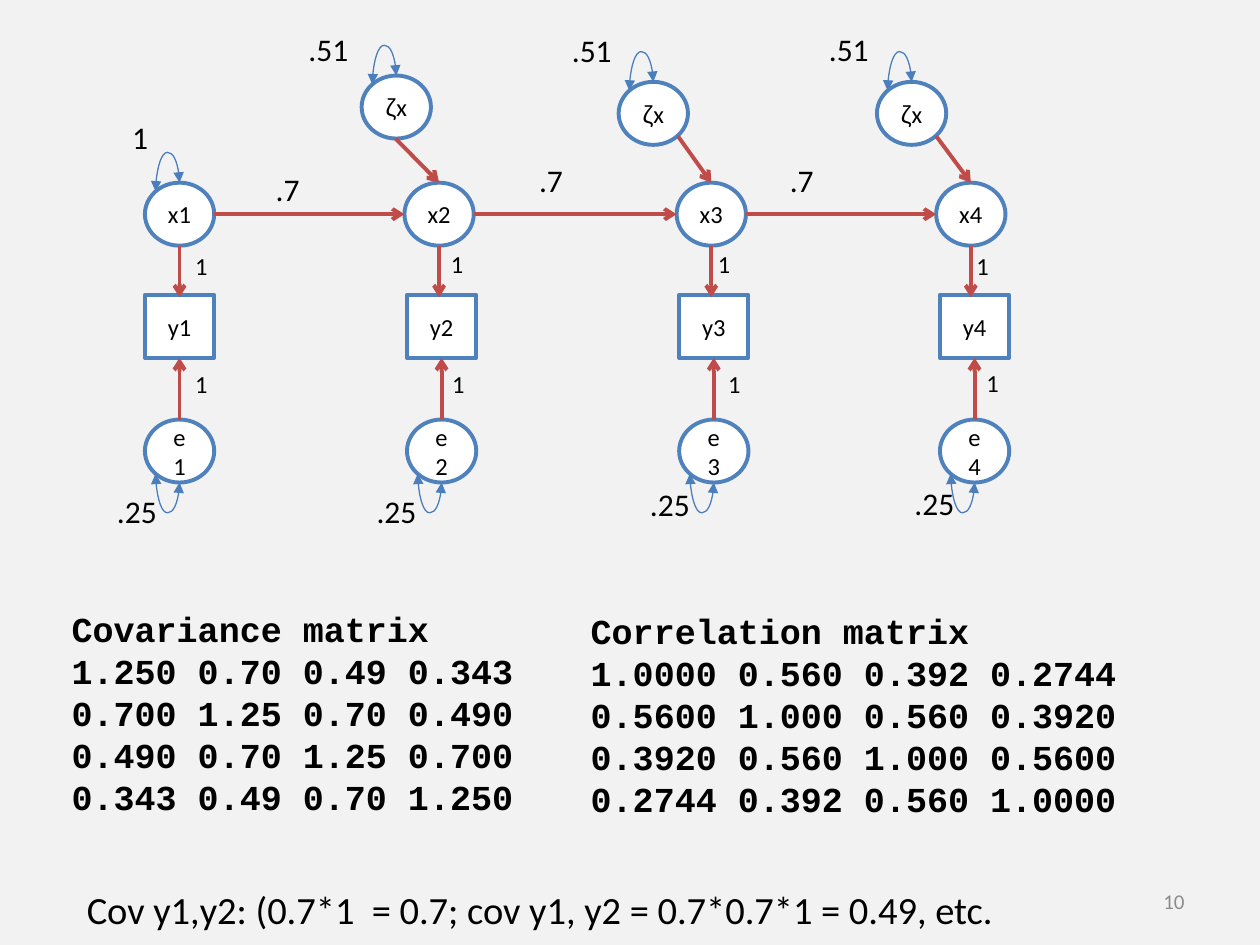
from dataclasses import dataclass

from lxml import etree
from pptx import Presentation
from pptx import util as u
from pptx.dml.color import RGBColor
from pptx.enum import shapes, text
from pptx.oxml.ns import qn

BLACK, WHITE, GREY, PAPER = "000000", "FFFFFF", "8C8C8C", "F2F2F2"
OUTLINE, PATH_RED, LOOP_BLUE = "4F81BD", "BF4C48", "4B7EBC"
NODE_W, NODE_H = 0.55, 0.5
LOOP_W, LOOP_H = 0.19, 0.07
STATE_TOP, OBSERVED_TOP, ERROR_TOP = 1.45, 2.34, 3.33
LABEL_WIDTHS = {"1": 0.33, ".7": 0.4, ".25": 0.54, ".51": 0.54}


@dataclass
class Wave:
    """Left edges of one wave's nodes and the places of its labels."""
    state: float
    observed: float
    loading_at: tuple
    residual_at: tuple
    variance_at: tuple


@dataclass
class Disturbance:
    """A disturbance node, where its arrow leaves it, and its label place."""
    left: float
    top: float
    exit: tuple
    variance_at: tuple


WAVES = [
    Wave(1.15, 1.15, (1.45, 1.94), (1.45, 2.88), (0.83, 3.86)),
    Wave(3.21, 3.23, (3.48, 1.93), (3.49, 2.88), (2.89, 3.86)),
    Wave(5.37, 5.39, (5.60, 1.93), (5.68, 2.88), (5.06, 3.80)),
    Wave(7.43, 7.46, (7.65, 1.94), (7.73, 2.87), (7.16, 3.79)),
]
DISTURBANCES = [
    Disturbance(2.87, 0.60, (3.14, 1.10), (2.35, 0.19)),
    Disturbance(4.91, 0.65, (5.38, 1.08), (4.44, 0.20)),
    Disturbance(6.96, 0.65, (7.43, 1.08), (6.48, 0.19)),
]
PATH_LABELS = [(2.09, 1.30), (4.18, 1.23), (6.17, 1.23)]


def rgb(value):
    """Turn a hex string into a colour."""
    return RGBColor.from_string(value)


def set_font(font, size, name="Calibri", color=BLACK, bold=False):
    """Format the font of a paragraph or span."""
    font.size, font.name, font.bold = u.Pt(size), name, bold
    font.color.rgb = rgb(color)


def add_text(canvas, box, lines, size, wrap=False, align=text.PP_ALIGN.LEFT, **font):
    """Place a text box with one paragraph for each line."""
    frame = canvas.add_textbox(*map(u.Inches, box)).text_frame
    frame.word_wrap = wrap
    frame.text = "\n".join(lines)
    for para in frame.paragraphs:
        para.alignment = align
        set_font(para.font, size, **font)
    return frame


def add_label(canvas, place, words, size=18):
    """Place a short path or variance label on one line."""
    height = 0.34 if size == 14 else 0.4
    frame = add_text(canvas, (*place, LABEL_WIDTHS[words], height), [words], size)
    frame.auto_size = text.MSO_AUTO_SIZE.SHAPE_TO_FIT_TEXT


def add_node(canvas, kind, left, top, *words):
    """Place an outlined node whose words are separate spans."""
    node = canvas.add_shape(kind, *map(u.Inches, (left, top, NODE_W, NODE_H)))
    node.shadow.inherit = False
    node.fill.solid()
    node.fill.fore_color.rgb = rgb(WHITE)
    node.line.color.rgb = rgb(OUTLINE)
    node.line.width = u.Pt(2.25)
    node.text_frame.vertical_anchor = text.MSO_ANCHOR.MIDDLE
    para = node.text_frame.paragraphs[0]
    para.alignment = text.PP_ALIGN.CENTER
    set_font(para.font, 14)
    for word in words:
        span = para.add_run()
        span.text = word
        if word == "ζ":
            span.font.name = "Arial"


def add_link(canvas, kind, start, end, color, width, ends):
    """Join two points with a line that has the given arrowheads."""
    link = canvas.add_connector(kind, *map(u.Inches, (*start, *end)))
    link.line.color.rgb = rgb(color)
    link.line.width = u.Pt(width)
    outline = link.line._get_or_add_ln()
    for tag, head in ends.items():
        etree.SubElement(outline, qn(f"a:{tag}")).set("type", head)
    etree.SubElement(link._element.spPr, qn("a:effectLst"))
    return link


def add_arrow(canvas, start, end):
    """Draw a red path arrow."""
    add_link(canvas, shapes.MSO_CONNECTOR.STRAIGHT, start, end, PATH_RED, 2.25,
             {"tailEnd": "arrow"})


def add_loop(canvas, left, top, above):
    """Draw a double-headed variance loop over or under a node's corner."""
    middle_x, middle_y = left + LOOP_W / 2, top + LOOP_H / 2
    near, far = middle_y - LOOP_W / 2, middle_y + LOOP_W / 2
    west, east = middle_x - LOOP_H / 2, middle_x + LOOP_H / 2
    start, end = ((east, far), (west, near)) if above else ((east, near), (west, far))
    loop = add_link(canvas, shapes.MSO_CONNECTOR.CURVE, start, end, LOOP_BLUE, 0.75,
                    {"headEnd": "triangle", "tailEnd": "triangle"})
    properties = loop._element.spPr
    properties.find(qn("a:xfrm")).set("rot", "16200000")
    geometry = properties.find(qn("a:prstGeom"))
    guides = geometry.find(qn("a:avLst"))
    if guides is None:
        guides = etree.SubElement(geometry, qn("a:avLst"))
    bend = -343600 if above else 443600
    etree.SubElement(guides, qn("a:gd"), name="adj1", fmla=f"val {bend}")


def draw_wave(canvas, number, wave):
    """Draw one wave: state, observed variable, error and their paths."""
    oval, square = shapes.MSO_SHAPE.OVAL, shapes.MSO_SHAPE.RECTANGLE
    add_node(canvas, square, wave.observed, OBSERVED_TOP, f"y{number}")
    add_node(canvas, oval, wave.state, STATE_TOP, f"x{number}")
    add_node(canvas, oval, wave.observed, ERROR_TOP, f"e{number}")
    state_x, error_x = wave.state + NODE_W / 2, wave.observed + NODE_W / 2
    add_arrow(canvas, (state_x, STATE_TOP + NODE_H), (state_x, OBSERVED_TOP + 0.02))
    add_arrow(canvas, (error_x, ERROR_TOP), (error_x, OBSERVED_TOP + NODE_H))
    add_label(canvas, wave.loading_at, "1", 14)
    add_label(canvas, wave.residual_at, "1", 14)
    add_label(canvas, wave.variance_at, ".25")
    add_loop(canvas, error_x - LOOP_W, ERROR_TOP + NODE_H - LOOP_H, above=False)


def draw_disturbance(canvas, source, wave):
    """Draw a disturbance with its loop and the arrow to its state."""
    add_node(canvas, shapes.MSO_SHAPE.OVAL, source.left, source.top, "ζ", "x")
    add_arrow(canvas, source.exit, (wave.state + NODE_W / 2, STATE_TOP))
    add_label(canvas, source.variance_at, ".51")
    add_loop(canvas, source.left + NODE_W / 2 - LOOP_W, source.top, above=True)


def draw_diagram(canvas):
    """Draw the whole path diagram."""
    for number, wave in enumerate(WAVES, 1):
        draw_wave(canvas, number, wave)
    level = STATE_TOP + NODE_H / 2
    for before, after, place in zip(WAVES, WAVES[1:], PATH_LABELS):
        add_arrow(canvas, (before.state + NODE_W, level), (after.state, level))
        add_label(canvas, place, ".7")
    for source, wave in zip(DISTURBANCES, WAVES[1:]):
        draw_disturbance(canvas, source, wave)
    add_label(canvas, (0.95, 0.89), "1")
    add_loop(canvas, WAVES[0].state + NODE_W / 2 - LOOP_W, STATE_TOP, above=True)


def draw_matrix(canvas, box, title, rows):
    """Place a titled matrix in monospaced type."""
    add_text(canvas, box, [title, *rows], 20, wrap=True, name="Courier New", bold=True)


def main():
    """Build and save the slide."""
    deck = Presentation()
    deck.slide_width, deck.slide_height = u.Inches(10), u.Inches(7.5)
    page = deck.slides.add_slide(deck.slide_layouts[6])
    page.background.fill.solid()
    page.background.fill.fore_color.rgb = rgb(PAPER)
    number = add_text(page.shapes, (7.17, 6.95, 2.33, 0.4), ["10"], 12, wrap=True,
                      align=text.PP_ALIGN.RIGHT, color=GREY)
    number.vertical_anchor = text.MSO_ANCHOR.MIDDLE
    draw_diagram(page.shapes.add_group_shape().shapes)
    draw_matrix(page.shapes, (0.47, 4.77, 4.12, 1.78), "Covariance matrix", [
        "1.250 0.70 0.49 0.343", "0.700 1.25 0.70 0.490",
        "0.490 0.70 1.25 0.700", "0.343 0.49 0.70 1.250"])
    draw_matrix(page.shapes, (4.59, 4.79, 5.06, 1.78), "Correlation matrix", [
        "1.0000 0.560 0.392 0.2744", "0.5600 1.000 0.560 0.3920",
        "0.3920 0.560 1.000 0.5600", "0.2744 0.392 0.560 1.0000"])
    add_text(page.shapes, (0.59, 6.98, 7.48, 0.47),
             ["Cov y1,y2: (0.7*1  = 0.7; cov y1, y2 = 0.7*0.7*1 = 0.49, etc."], 22)
    deck.save("out.pptx")


if __name__ == "__main__":
    main()
